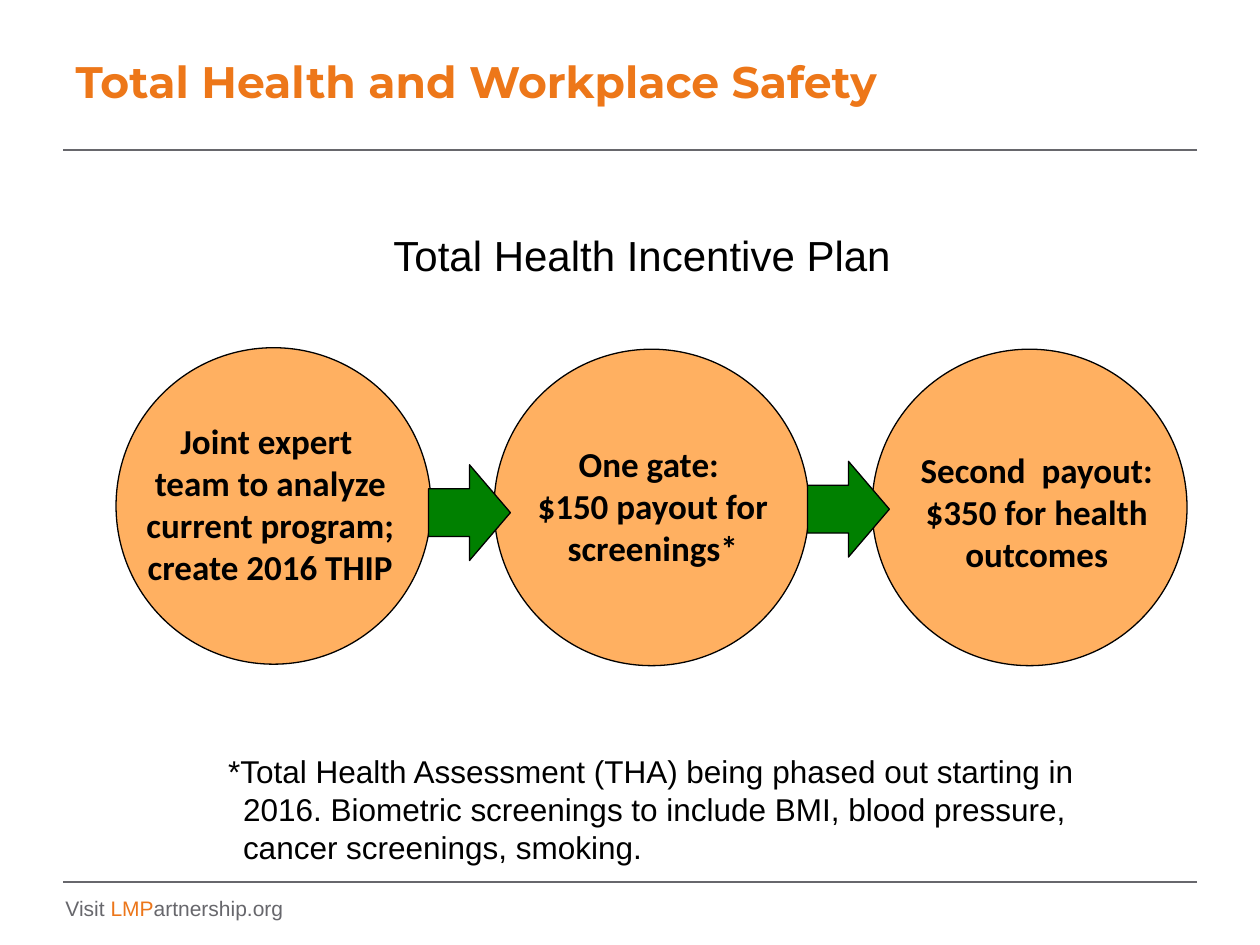
from dataclasses import dataclass

from pptx import Presentation
from pptx.dml.color import RGBColor
from pptx.enum.shapes import MSO_CONNECTOR, MSO_SHAPE
from pptx.enum.text import MSO_ANCHOR, PP_ALIGN
from pptx.oxml.ns import qn
from pptx.shapes.autoshape import Shape
from pptx.slide import Slide
from pptx.util import Cm, Pt
from lxml.etree import SubElement

ORANGE = RGBColor(0xED, 0x77, 0x19)
ACCENT = RGBColor(0xEC, 0x76, 0x1A)
PEACH = RGBColor(0xFF, 0xB0, 0x61)
GREEN = RGBColor(0x00, 0x80, 0x00)
GRAY = RGBColor(0x67, 0x67, 0x6C)
BLACK = RGBColor(0x00, 0x00, 0x00)


@dataclass
class Box:
    left: float
    top: float
    width: float
    height: float

    def place(self) -> tuple:
        return Cm(self.left), Cm(self.top), Cm(self.width), Cm(self.height)


@dataclass
class Step:
    text: str
    top: float
    label: Box


STEPS = [
    Step("Joint expert \nteam to analyze current program; create 2016 THIP",
         7.01, Box(2.59, 8.33, 5.72, 3.68)),
    Step("One gate: \n$150 payout for screenings*",
         7.04, Box(10.01, 8.79, 6.3, 2.82)),
    Step("Second  payout: $350 for health outcomes",
         7.04, Box(17.98, 8.92, 5.84, 2.82)),
]
LEFT, PITCH = 2.34, 7.62
ARROWS = [Box(8.64, 9.37, 1.65, 1.93), Box(16.28, 9.3, 1.65, 1.93)]


def style(para, name: str, size: float, color: RGBColor, bold: bool = False) -> None:
    font = para.font
    font.name, font.size, font.bold = name, Pt(size), bold
    font.color.rgb = color


def add_text(slide: Slide, box: Box, text: str, name: str, size: float,
             color: RGBColor = BLACK, bold: bool = False,
             align: PP_ALIGN = PP_ALIGN.CENTER):
    frame = slide.shapes.add_textbox(*box.place()).text_frame
    frame.word_wrap = True
    para = frame.paragraphs[0]
    para.text = text
    para.alignment = align
    style(para, name, size, color, bold)
    return para


def add_form(slide: Slide, kind: MSO_SHAPE, box: Box, fill: RGBColor) -> Shape:
    form = slide.shapes.add_shape(kind, *box.place())
    form.shadow.inherit = False
    form.fill.solid()
    form.fill.fore_color.rgb = fill
    form.line.color.rgb = BLACK
    form.line.width = Pt(0.75)
    return form


def add_rule(slide: Slide, top: float) -> None:
    rule = slide.shapes.add_connector(
        MSO_CONNECTOR.STRAIGHT, Cm(24.13), Cm(top), Cm(1.27), Cm(top))
    rule.line.color.rgb = GRAY
    rule.line.width = Pt(1)
    SubElement(rule._element.spPr, qn("a:effectLst"))


def main() -> None:
    deck = Presentation()
    deck.slide_width, deck.slide_height = Cm(25.4), Cm(19.05)
    slide = deck.slides.add_slide(deck.slide_layouts[5])

    # Rules and footer
    for top in (3.02, 17.78):
        add_rule(slide, top)
    foot = add_text(slide, Box(1.07, 17.93, 9.7, 0.76), "", "Arial", 12,
                    GRAY, align=PP_ALIGN.LEFT)
    for text, color in (("Visit ", GRAY), ("LMP", ACCENT), ("artnership.org", GRAY)):
        run = foot.add_run()
        run.text = text
        run.font.color.rgb = color

    # Title
    title = slide.shapes.title
    title.left, title.top, title.width, title.height = Box(1.27, 0.97, 18.67, 2.06).place()
    title.text_frame.vertical_anchor = MSO_ANCHOR.TOP
    head = title.text_frame.paragraphs[0]
    head.text = "Total Health and Workplace Safety"
    head.alignment = PP_ALIGN.LEFT
    style(head, "Montserrat", 25.2, ORANGE, True)

    # Heading and footnote
    add_text(slide, Box(4.5, 4.5, 16.89, 1.32), "Total Health Incentive Plan", "Arial", 24)
    note = add_text(
        slide, Box(4.17, 15.04, 18.29, 2.57),
        "*Total Health Assessment (THA) being phased out starting in 2016. "
        "Biometric screenings to include BMI, blood pressure, cancer screenings, smoking.",
        "Arial", 18, align=PP_ALIGN.LEFT)
    props = note._p.get_or_add_pPr()
    props.set("marL", str(Cm(0.48)))
    props.set("indent", str(Cm(-0.3)))

    # Steps, then the arrows that overlap them
    for i, step in enumerate(STEPS):
        add_form(slide, MSO_SHAPE.OVAL, Box(LEFT + i * PITCH, step.top, 6.35, 6.38), PEACH)
        add_text(slide, step.label, step.text, "Calibri", 20, bold=True)
    for box in ARROWS:
        add_form(slide, MSO_SHAPE.RIGHT_ARROW, box, GREEN)

    deck.save("out.pptx")


if __name__ == "__main__":
    main()
